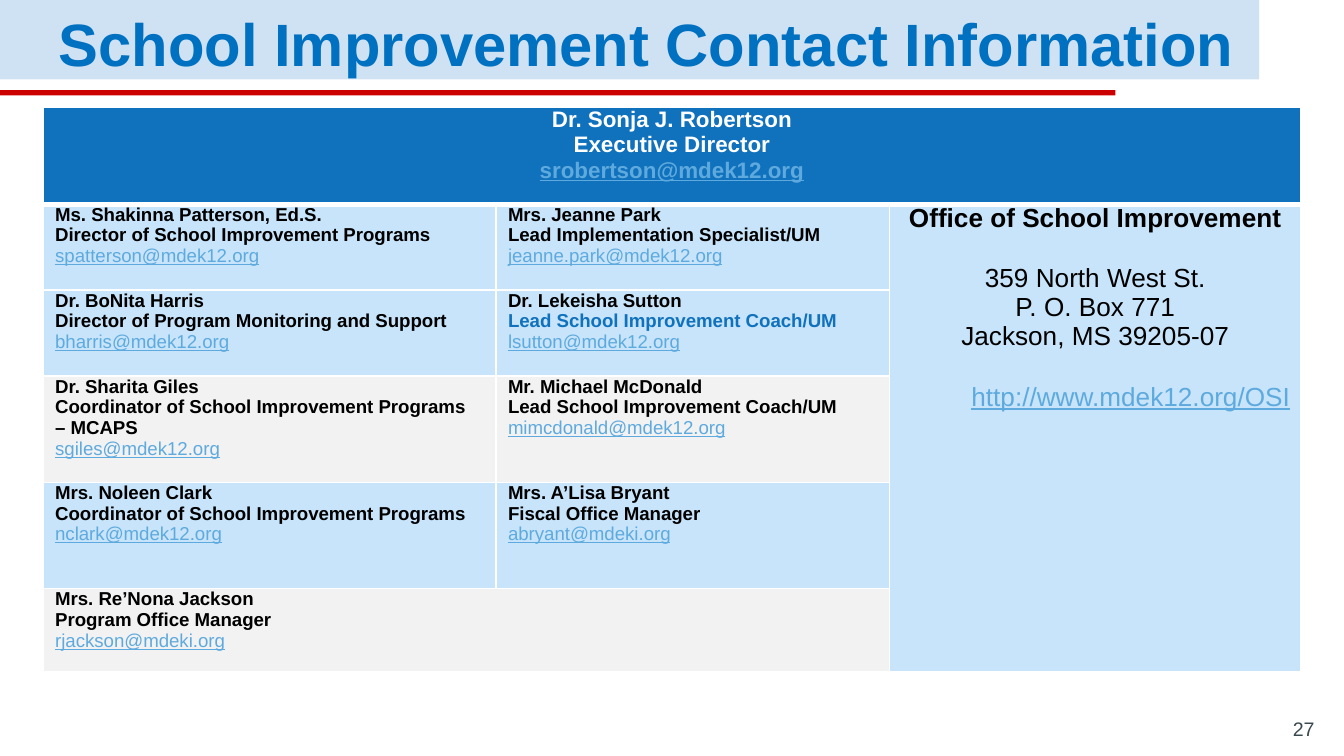
from lxml.etree import SubElement
from pptx import Presentation
from pptx.dml.color import RGBColor
from pptx.enum.shapes import MSO_SHAPE
from pptx.enum.text import MSO_ANCHOR, PP_ALIGN
from pptx.oxml.ns import qn
from pptx.util import Inches, Pt

BLUE, PALE, GREY, LINK = "1071BD", "C7E4FA", "F2F2F2", "5EAADE"
BLACK, WHITE = "000000", "FFFFFF"


def paint(fill, color):
    fill.solid()
    fill.fore_color.rgb = RGBColor.from_string(color)


def add_line(frame, text, size, color=BLACK, bold=False, align=PP_ALIGN.LEFT,
             indent=0, before=0):
    """Fill the empty first paragraph of the frame, or append one; web and mail links are underlined."""
    paragraph = frame.paragraphs[0]
    if paragraph.runs:
        paragraph = frame.add_paragraph()
    paragraph.alignment = align
    paragraph.space_before = Pt(before)
    paragraph._p.get_or_add_pPr().set("marL", str(Inches(indent)))
    span = paragraph.add_run()
    span.text = text
    span.font.name = "Arial"
    span.font.size = Pt(size)
    span.font.bold = bold
    span.font.underline = "@" in text or "://" in text
    paint(span.font.fill, color)
    return paragraph


deck = Presentation()
deck.slide_width = Inches(10)
deck.slide_height = Inches(10) * 9 // 16
page = deck.slides.add_slide(deck.slide_layouts[6])

# Title band and red rule
for top, width, height, color in [(0, 9.37, 0.59, "CFE2F3"), (0.67, 8.3, 0.04, "CC0000")]:
    band = page.shapes.add_shape(MSO_SHAPE.RECTANGLE, 0, Inches(top), Inches(width), Inches(height))
    band.shadow.inherit = False
    band.line.fill.background()
    paint(band.fill, color)

# Title and page number
for left, top, width, height, anchor, text, style in [
    (0.34, 0.03, 9.03, 0.49, MSO_ANCHOR.MIDDLE, "School Improvement Contact Information",
     dict(size=32, color="0070C0", bold=True)),
    (9.28, 5.34, 0.6, 0.26, MSO_ANCHOR.BOTTOM, "27",
     dict(size=10.5, color="3A4950", align=PP_ALIGN.RIGHT)),
]:
    box = page.shapes.add_textbox(Inches(left), Inches(top), Inches(width), Inches(height))
    frame = box.text_frame
    frame.word_wrap = True
    frame.vertical_anchor = anchor
    frame.margin_left = frame.margin_right = Inches(0.1)
    frame.margin_top = frame.margin_bottom = Inches(0.1)
    paragraph = add_line(frame, text, **style)
    if anchor == MSO_ANCHOR.MIDDLE:
        paragraph.line_spacing = 1.15
        paragraph.space_after = Pt(16)

# Contact table
columns = [3.37, 2.93, 3.06]
rows = [0.72, 0.64, 0.64, 0.79, 0.79, 0.62]
row_fills = [BLUE, PALE, PALE, GREY, PALE, GREY]
table = page.shapes.add_table(len(rows), len(columns), Inches(0.32), Inches(0.8),
                              Inches(sum(columns)), Inches(sum(rows))).table
table.first_row = table.horz_banding = False
for column, width in zip(table.columns, columns):
    column.width = Inches(width)
for row, height in zip(table.rows, rows):
    row.height = Inches(height)

for row_index, row_fill in enumerate(row_fills):
    for column_index in range(len(columns)):
        cell = table.cell(row_index, column_index)
        cell.margin_left = cell.margin_right = cell.margin_top = cell.margin_bottom = 0
        for side in "LRTB":
            thick = (row_index, side) in [(0, "B"), (1, "T")]
            border = SubElement(cell._tc.get_or_add_tcPr(), qn(f"a:ln{side}"),
                                w=str(Pt(3 if thick else 1)))
            SubElement(SubElement(border, qn("a:solidFill")), qn("a:srgbClr"), val=WHITE)
        paint(cell.fill, PALE if row_index and column_index == 2 else row_fill)

table.cell(0, 0).merge(table.cell(0, 2))
table.cell(1, 2).merge(table.cell(5, 2))
table.cell(5, 0).merge(table.cell(5, 1))

header = table.cell(0, 0).text_frame
for text, color in [("Dr. Sonja J. Robertson", WHITE), ("Executive Director", WHITE),
                    ("srobertson@mdek12.org", LINK)]:
    add_line(header, text, 12, color, bold=True, align=PP_ALIGN.CENTER)

contacts = [
    [["Ms. Shakinna Patterson, Ed.S.", "Director of School Improvement Programs",
      "spatterson@mdek12.org"],
     ["Mrs. Jeanne Park", "Lead Implementation Specialist/UM", "jeanne.park@mdek12.org"]],
    [["Dr. BoNita Harris", "Director of Program Monitoring and Support", "bharris@mdek12.org"],
     ["Dr. Lekeisha Sutton", "Lead School Improvement Coach/UM", "lsutton@mdek12.org"]],
    [["Dr. Sharita Giles", "Coordinator of School Improvement Programs", "– MCAPS",
      "sgiles@mdek12.org"],
     ["Mr. Michael McDonald", "Lead School Improvement Coach/UM", "mimcdonald@mdek12.org"]],
    [["Mrs. Noleen Clark", "Coordinator of School Improvement Programs", "nclark@mdek12.org"],
     ["Mrs. A’Lisa Bryant", "Fiscal Office Manager", "abryant@mdeki.org"]],
    [["Mrs. Re’Nona Jackson", "Program Office Manager", "rjackson@mdeki.org"]],
]
for row_index, people in enumerate(contacts, start=1):
    for column_index, lines in enumerate(people):
        frame = table.cell(row_index, column_index).text_frame
        name, *titles, email = lines
        title_color = BLUE if name == "Dr. Lekeisha Sutton" else BLACK
        add_line(frame, name, 10, bold=True, indent=0.09)
        for title in titles:
            add_line(frame, title, 10, title_color, bold=True, indent=0.09)
        add_line(frame, email, 10, LINK, indent=0.09)

office = table.cell(1, 2).text_frame
for text, style in [
    ("Office of School Improvement", dict(bold=True)),
    ("359 North West St.", dict(before=16)),
    ("P. O. Box 771", {}),
    ("Jackson, MS 39205-07", {}),
    ("http://www.mdek12.org/OSI", dict(color=LINK, before=16.5, indent=0.53)),
]:
    add_line(office, text, 14, align=PP_ALIGN.CENTER, **style)

deck.save("out.pptx")
